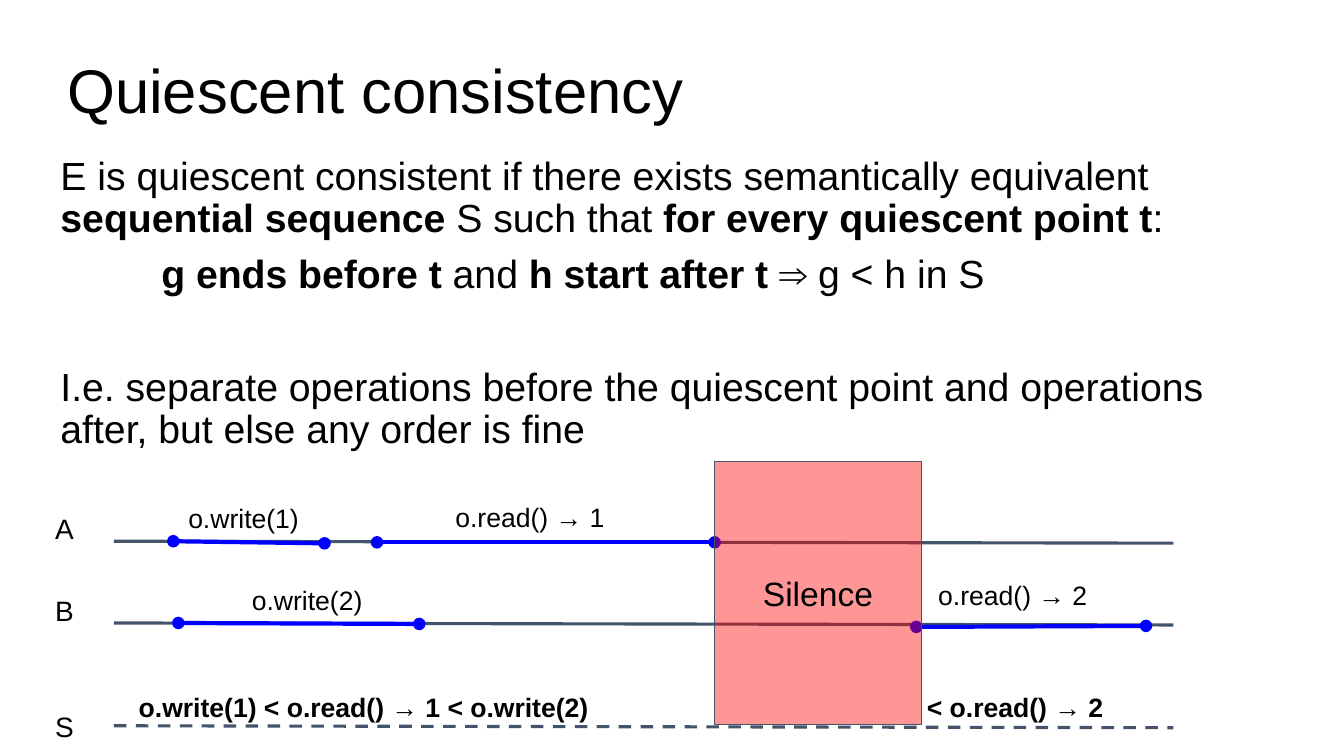
from pptx import Presentation
from pptx.dml.color import RGBColor
from pptx.enum.dml import MSO_LINE
from pptx.enum.shapes import MSO_CONNECTOR, MSO_SHAPE
from pptx.enum.text import MSO_ANCHOR, MSO_AUTO_SIZE, PP_ALIGN
from pptx.oxml.ns import qn
from pptx.util import Pt
from lxml.etree import SubElement

FONT = "Arial"
BLACK, WHITE, SLATE, BLUE, RED = "000000", "FFFFFF", "44546A", "0000FF", "FF0000"


def color(code):
    return RGBColor.from_string(code)


def style(run, size, bold=False):
    font = run.font
    font.name, font.size, font.bold = FONT, Pt(size), bold
    font.color.rgb = color(BLACK)


def place(shape, left, top, width, height):
    shape.left, shape.top = Pt(left), Pt(top)
    shape.width, shape.height = Pt(width), Pt(height)


def setup(frame, inset, anchor=MSO_ANCHOR.TOP):
    frame.word_wrap = True
    frame.auto_size = MSO_AUTO_SIZE.NONE
    frame.vertical_anchor = anchor
    frame.margin_left = frame.margin_right = Pt(inset)
    frame.margin_top = frame.margin_bottom = Pt(inset)


def add_title(slide, text):
    title = slide.shapes.title
    place(title, 48, 21.6, 864, 90)
    frame = title.text_frame
    setup(frame, 0, MSO_ANCHOR.MIDDLE)
    frame.text = text
    para = frame.paragraphs[0]
    para.alignment = PP_ALIGN.LEFT
    para.line_spacing = 0.9
    style(para.runs[0], 44)


def add_body(slide, paras):
    body = slide.placeholders[1]
    place(body, 43.2, 111.6, 864, 226)
    body.fill.solid()
    body.fill.fore_color.rgb = color(WHITE)
    frame = body.text_frame
    setup(frame, 0)
    for i, (before, indent, parts) in enumerate(paras):
        para = frame.paragraphs[0] if i == 0 else frame.add_paragraph()
        props = para._p.get_or_add_pPr()
        props.set("marL", str(Pt(indent)))
        props.set("indent", str(Pt(indent)))
        para.line_spacing = 0.9
        para.space_before = Pt(before)
        SubElement(props, qn("a:buNone"))
        for text, bold in parts:
            run = para.add_run()
            run.text = text
            style(run, 28, bold)


def add_line(slide, start, end, code, width):
    ends = [Pt(n) for n in (*start, *end)]
    line = slide.shapes.add_connector(MSO_CONNECTOR.STRAIGHT, *ends)
    line.line.color.rgb = color(code)
    line.line.width = Pt(width)
    SubElement(line._element.spPr, qn("a:effectLst"))
    return line


def add_axis(slide, top, dashed):
    axis = add_line(slide, (81.4, top), (838.1, top + 1.4), SLATE, 2.25)
    if dashed:
        axis.line.dash_style = MSO_LINE.DASH


def add_span(slide, start, end):
    span = add_line(slide, start, end, BLUE, 3)
    stroke = span.line._get_or_add_ln()
    for tag in ("a:headEnd", "a:tailEnd"):
        SubElement(stroke, qn(tag), type="oval")


def add_label(slide, text, left, top, width, size=19, bold=False):
    box = slide.shapes.add_textbox(Pt(left), Pt(top), Pt(width), Pt(37.4))
    setup(box.text_frame, 7.2)
    box.text_frame.text = text
    style(box.text_frame.paragraphs[0].runs[0], size, bold)


def add_block(slide, text):
    block = slide.shapes.add_shape(
        MSO_SHAPE.RECTANGLE, Pt(510.5), Pt(329.8), Pt(147.6), Pt(187.9))
    block.shadow.inherit = False
    block.fill.solid()
    block.fill.fore_color.rgb = color(RED)
    tint = block._element.spPr.find(qn("a:solidFill"))[0]
    SubElement(tint, qn("a:alpha"), val="41000")
    block.line.color.rgb = color(SLATE)
    block.line.width = Pt(0.75)
    frame = block.text_frame
    setup(frame, 7.2, MSO_ANCHOR.MIDDLE)
    frame.text = text
    para = frame.paragraphs[0]
    para.alignment = PP_ALIGN.CENTER
    style(para.runs[0], 24)


def main():
    deck = Presentation()
    deck.slide_width, deck.slide_height = Pt(960), Pt(540)
    slide = deck.slides.add_slide(deck.slide_layouts[1])

    add_title(slide, "Quiescent consistency")
    add_body(slide, [
        (0, 0, [
            ("E is quiescent consistent if there exists semantically equivalent ", False),
            ("sequential sequence ", True),
            ("S such that ", False),
            ("for every quiescent point t", True),
            (":", False)]),
        (10, 36, [
            ("g ends before t", True),
            (" and ", False),
            ("h start after t", True),
            (" ⇒ g < h in S", False)]),
        (50, 0, [
            ("I.e. separate operations before the quiescent point and "
             "operations after, but else any order is fine", False)]),
    ])

    threads = [("A", 386.6, 357.8), ("B", 445, 416.9), ("S", 518.4, 499.7)]
    for name, top, _ in threads:
        add_axis(slide, top, name == "S")

    spans = [
        ((123.8, 386.6), (231.8, 388.1)),
        ((269.3, 387.4), (510.5, 387.4)),
        ((127.4, 445), (299.5, 445.7)),
        ((654.5, 447.8), (818.6, 447.1)),
    ]
    for start, end in spans:
        add_span(slide, start, end)

    calls = [
        ("o.write(1)", 127.4, 351.4, 101.5),
        ("o.write(2)", 172.8, 409.7, 101.5),
        ("o.read() → 1", 318.2, 350.6, 134.6),
        ("o.read() → 2", 663.1, 406.1, 124.6),
    ]
    for call in calls:
        add_label(slide, *call)

    add_block(slide, "Silence")

    order = [
        ("o.write(1) < o.read() → 1 < o.write(2)", 92, 400),
        ("< o.read() → 2", 655, 180),
    ]
    for text, left, width in order:
        add_label(slide, text, left, 486, width, bold=True)
    for name, _, top in threads:
        add_label(slide, name, 32.4, top, 41, size=20)

    deck.save("out.pptx")


if __name__ == "__main__":
    main()
